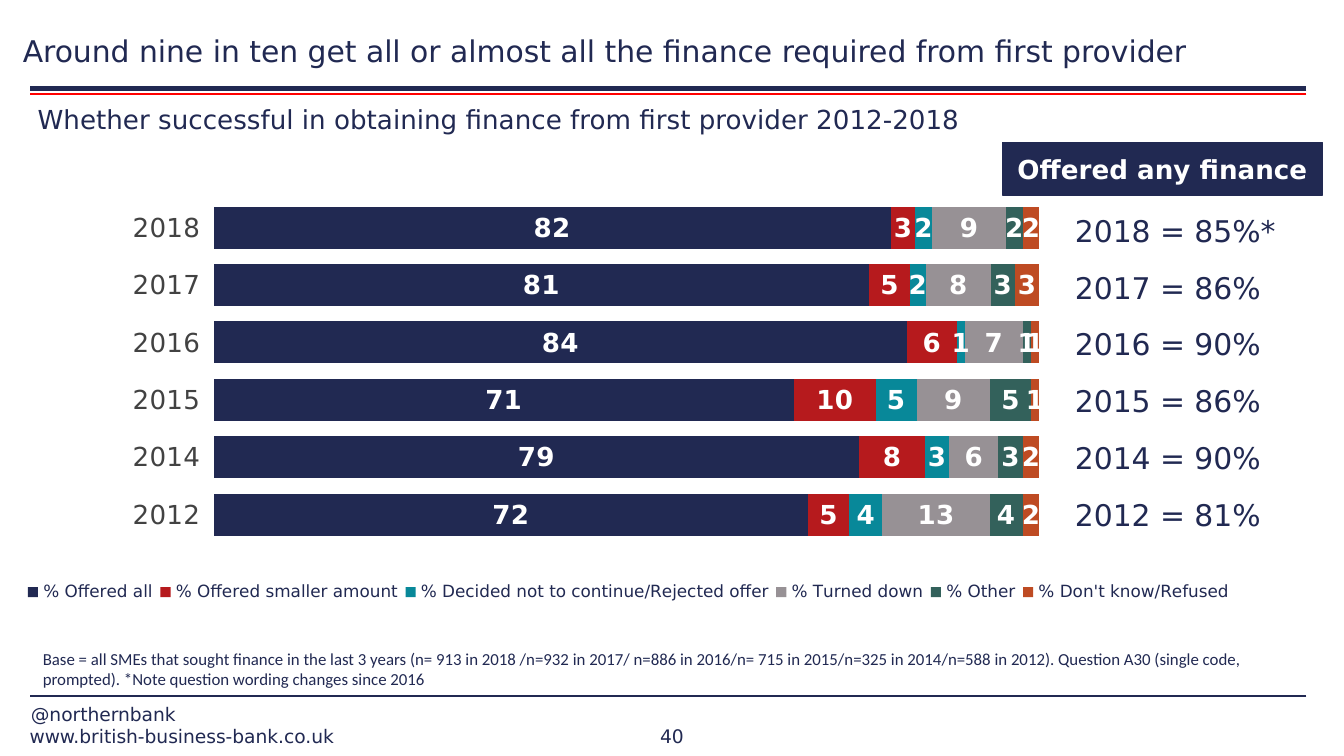
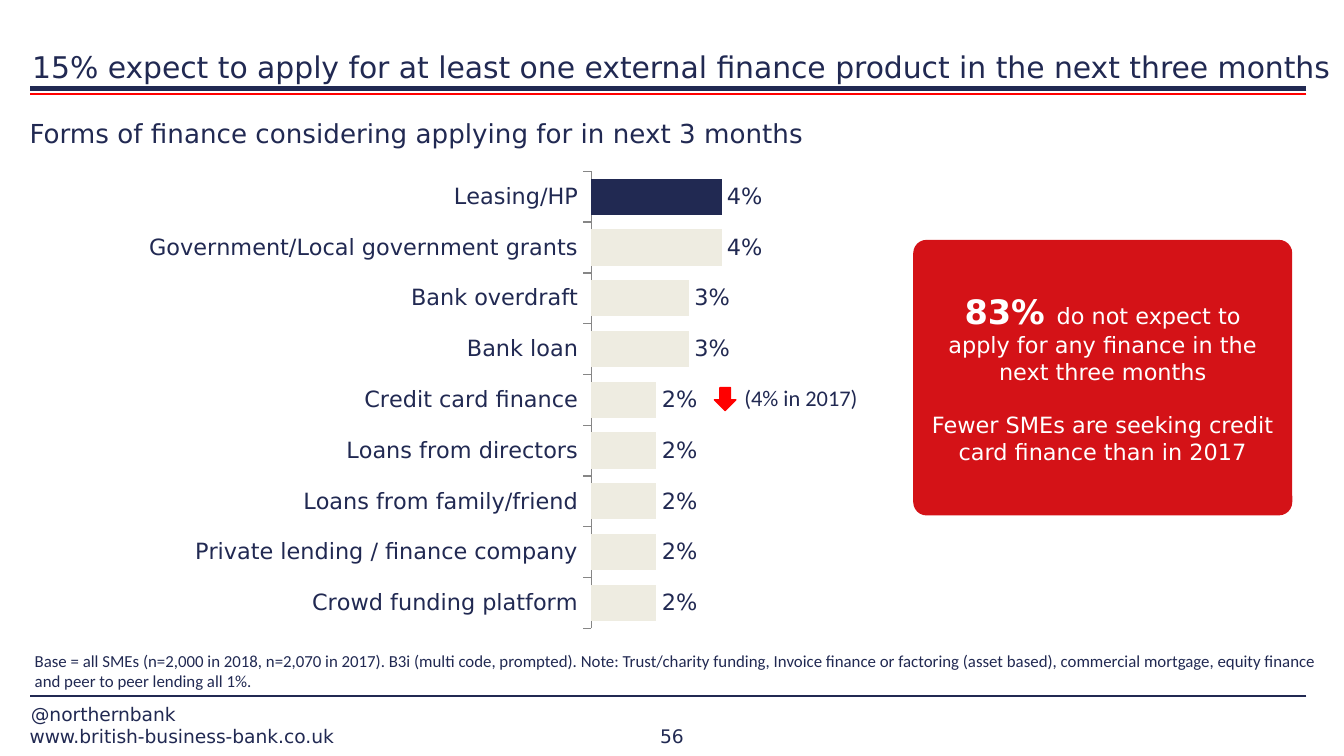
"""Build two survey slides on small business finance."""
from pptx import Presentation
from pptx.chart.data import CategoryChartData
from pptx.dml.color import RGBColor
from pptx.enum.chart import XL_CHART_TYPE, XL_LABEL_POSITION, XL_LEGEND_POSITION, XL_TICK_LABEL_POSITION, XL_TICK_MARK
from pptx.enum.shapes import MSO_CONNECTOR, MSO_SHAPE
from pptx.enum.text import MSO_ANCHOR, PP_ALIGN
from pptx.oxml import parse_xml
from pptx.oxml.ns import nsdecls
from pptx.util import Inches, Pt
from lxml.etree import SubElement

COLORS = {
    "navy": "212952", "red": "FF0000", "callout": "D41217", "white": "FFFFFF",
    "axis_text": "424242", "axis_line": "868686", "cream": "EEECE1",
    "crimson": "B61A1D", "teal": "088899", "grey": "979195",
    "green": "33615B", "rust": "BE4B23",
}
HEADING_FONT = "DejaVu Sans"
NOTE_FONT = "Calibri"
DRAWING_NS = "{http://schemas.openxmlformats.org/drawingml/2006/main}"

OFFER_YEARS = ["2018", "2017", "2016", "2015", "2014", "2012"]
OFFER_SERIES = [
    ("% Offered all", "navy", (82, 81, 84, 71, 79, 72)),
    ("% Offered smaller amount", "crimson", (3, 5, 6, 10, 8, 5)),
    ("% Decided not to continue/Rejected offer", "teal", (2, 2, 1, 5, 3, 4)),
    ("% Turned down", "grey", (9, 8, 7, 9, 6, 13)),
    ("% Other", "green", (2, 3, 1, 5, 3, 4)),
    ("% Don't know/Refused", "rust", (2, 3, 1, 1, 2, 2)),
]
ANY_FINANCE = ["85%*", "86%", "90%", "86%", "90%", "81%"]
FINANCE_FORMS = {
    "Leasing/HP": 4, "Government/Local government grants": 4,
    "Bank overdraft": 3, "Bank loan": 3, "Credit card finance": 2,
    "Loans from directors": 2, "Loans from family/friend": 2,
    "Private lending / finance company": 2, "Crowd funding platform": 2,
}


def color(name):
    """Return the named palette colour."""
    return RGBColor.from_string(COLORS[name])


def inches(box):
    """Turn a box of plain numbers into lengths."""
    return [Inches(value) for value in box]


def style_font(font, size, name=HEADING_FONT, tint="navy", bold=False):
    """Apply the typeface, size, colour and weight to a font."""
    font.name, font.size, font.bold = name, Pt(size), bold
    font.color.rgb = color(tint)


def add_text(slide, box, text, size, font=HEADING_FONT, margins=True,
             anchor=MSO_ANCHOR.TOP, align=PP_ALIGN.LEFT):
    """Add a wrapped one-paragraph text box."""
    text_frame = slide.shapes.add_textbox(*inches(box)).text_frame
    text_frame.word_wrap = True
    text_frame.vertical_anchor = anchor
    if not margins:
        clear_margins(text_frame)
    text_frame.text = text
    paragraph = text_frame.paragraphs[0]
    paragraph.alignment = align
    style_font(paragraph.runs[0].font, size, font)


def clear_margins(text_frame):
    """Remove the inner margins of a text frame."""
    text_frame.margin_left = text_frame.margin_right = 0
    text_frame.margin_top = text_frame.margin_bottom = 0


def add_block(slide, kind, box, tint):
    """Add a preset shape filled and outlined in one colour."""
    shape = slide.shapes.add_shape(kind, *inches(box))
    shape.shadow.inherit = False
    shape.fill.solid()
    shape.fill.fore_color.rgb = color(tint)
    shape.line.color.rgb = color(tint)
    shape.line.width = Pt(0.75)
    return shape


def add_rule(slide, left, right, top, tint, width):
    """Add a horizontal rule."""
    rule = slide.shapes.add_connector(
        MSO_CONNECTOR.STRAIGHT, *inches((right, top, left, top)))
    rule.line.color.rgb = color(tint)
    rule.line.width = Pt(width)
    SubElement(rule.element.spPr, DRAWING_NS + "effectLst")


def add_frame(slide, page_number):
    """Draw the title rules and the footer shared by the slides."""
    left, right = 0.22, 9.72
    for top, tint, width in ((0.66, "navy", 3), (0.7, "red", 1), (5.18, "navy", 1)):
        add_rule(slide, left, right, top, tint, width)
    footer = (
        ((left, 5.39, 3.19, 0.17), "www.british-business-bank.co.uk", PP_ALIGN.LEFT),
        ((left + 0.01, 5.23, 3.18, 0.17), "@northernbank", PP_ALIGN.LEFT),
        ((4.41, 5.39, 1.18, 0.17), str(page_number), PP_ALIGN.CENTER),
    )
    for box, text, align in footer:
        add_text(slide, box, text, 10, margins=False,
                 anchor=MSO_ANCHOR.BOTTOM, align=align)


def add_headings(slide, title_box, title, subtitle_box, subtitle):
    """Add the title above the rules and the subtitle below them."""
    add_text(slide, title_box, title, 16, margins=False, anchor=MSO_ANCHOR.BOTTOM)
    add_text(slide, subtitle_box, subtitle, 14, margins=False)


def manual_layout(left, top, width, height, inner=False):
    """Return a chart layout element given as fractions of the chart."""
    target = '<c:layoutTarget val="inner"/>' if inner else ""
    values = "".join(
        f'<c:{tag} val="{value}"/>'
        for tag, value in zip("xywh", (left, top, width, height)))
    return parse_xml(
        f'<c:layout {nsdecls("c")}><c:manualLayout>{target}'
        f'<c:xMode val="edge"/><c:yMode val="edge"/>{values}'
        "</c:manualLayout></c:layout>")


def add_bar_chart(slide, kind, box, categories, series_rows, gap, plot_layout):
    """Add a top-down bar chart with a hidden value axis."""
    chart_data = CategoryChartData()
    chart_data.categories = categories
    for name, _, values in series_rows:
        chart_data.add_series(name, values)
    chart = slide.shapes.add_chart(kind, *inches(box), chart_data).chart
    style_font(chart.font, 18, NOTE_FONT)
    chart.has_title = False
    chart.has_legend = False
    chart.value_axis.visible = False
    chart.value_axis.has_major_gridlines = False
    chart.value_axis.minimum_scale = 0
    chart.category_axis.reverse_order = True
    chart.category_axis.minor_tick_mark = XL_TICK_MARK.NONE
    chart.category_axis.tick_label_position = XL_TICK_LABEL_POSITION.LOW
    plot = chart.plots[0]
    plot.gap_width = gap
    plot.vary_by_categories = False
    for series, (_, tint, _) in zip(plot.series, series_rows):
        series.invert_if_negative = False
        series.format.fill.solid()
        series.format.fill.fore_color.rgb = color(tint)
    plot_area = chart.element.xpath("c:chart/c:plotArea")[0]
    for layout in plot_area.xpath("c:layout"):
        plot_area.remove(layout)
    plot_area.insert(0, manual_layout(*plot_layout, inner=True))
    return chart


def add_offer_chart(slide, box):
    """Add the stacked chart of offers by year, with its legend."""
    chart = add_bar_chart(slide, XL_CHART_TYPE.BAR_STACKED_100, box, OFFER_YEARS,
                          OFFER_SERIES, 37, (0.159, 0, 0.679, 0.714))
    chart.value_axis.maximum_scale = 1
    chart.value_axis.major_unit = 0.1
    axis = chart.category_axis
    axis.major_tick_mark = XL_TICK_MARK.NONE
    axis.format.line.fill.background()
    style_font(axis.tick_labels.font, 14, tint="axis_text")
    chart.plots[0].overlap = 100
    for series in chart.plots[0].series:
        labels = series.data_labels
        labels.show_value = True
        labels.position = XL_LABEL_POSITION.CENTER
        style_font(labels.font, 14, tint="white", bold=True)
    chart.has_legend = True
    legend = chart.legend
    legend.position = XL_LEGEND_POSITION.BOTTOM
    legend.include_in_layout = False
    style_font(legend.font, 9)
    for layout in legend._element.xpath("c:layout"):
        legend._element.remove(layout)
    legend._element.xpath("c:legendPos")[0].addnext(
        manual_layout(0, 0.78, 1, 0.07))


def add_any_finance(slide, box):
    """Add the header block and the yearly totals beneath it."""
    left, top, width, _ = box
    header = add_block(slide, MSO_SHAPE.RECTANGLE, (left, top, width, 0.39), "navy")
    clear_margins(header.text_frame)
    header.text_frame.text = "Offered any finance"
    header.text_frame.vertical_anchor = MSO_ANCHOR.MIDDLE
    paragraph = header.text_frame.paragraphs[0]
    paragraph.alignment = PP_ALIGN.CENTER
    style_font(paragraph.runs[0].font, 14, tint="white", bold=True)
    row_pitch = (3.65 - 1.53) / (len(OFFER_YEARS) - 1)
    for row, (year, share) in enumerate(zip(OFFER_YEARS, ANY_FINANCE)):
        row_box = (left + 0.44, top + 0.47 + row * row_pitch, 2.04, 0.37)
        add_text(slide, row_box, f"{year} = {share}", 16)


def add_forms_chart(slide, box):
    """Add the chart of finance forms, with the first bar picked out."""
    rows = [("Series 1", "cream", tuple(FINANCE_FORMS.values()))]
    chart = add_bar_chart(slide, XL_CHART_TYPE.BAR_CLUSTERED, box,
                          list(FINANCE_FORMS), rows, 40, (0.498, 0, 0.5, 1))
    chart.value_axis.maximum_scale = 20
    axis = chart.category_axis
    axis.major_tick_mark = XL_TICK_MARK.OUTSIDE
    axis.format.line.color.rgb = color("axis_line")
    style_font(axis.tick_labels.font, 12)
    series = chart.plots[0].series[0]
    leading_bar = series.points[0].format.fill
    leading_bar.solid()
    leading_bar.fore_color.rgb = color("navy")
    labels = series.data_labels
    labels.show_value = True
    labels.number_format = r"0\%"
    labels.number_format_is_linked = False
    labels.position = XL_LABEL_POSITION.OUTSIDE_END
    style_font(labels.font, 12)


def add_change_marker(slide, box):
    """Add the down arrow and the earlier share beside a bar."""
    left, top, width, height = box
    arrow = add_block(slide, MSO_SHAPE.RIGHT_ARROW,
                      (left, top + 0.08, 0.17, 0.16), "red")
    arrow.rotation = 90
    add_text(slide, (left + 0.13, top, width - 0.13, height),
             "(4% in 2017)", 12, NOTE_FONT)


def add_callout(slide, box):
    """Add the rounded box with the key finding."""
    shape = add_block(slide, MSO_SHAPE.ROUNDED_RECTANGLE, box, "callout")
    shape.adjustments[0] = 0.046
    text_frame = shape.text_frame
    text_frame.word_wrap = True
    text_frame.vertical_anchor = MSO_ANCHOR.MIDDLE
    finding = text_frame.paragraphs[0]
    trend = text_frame.add_paragraph()
    trend.space_before = Pt(14)
    runs = (
        (finding, "83% ", 18, True),
        (finding, "do not expect to apply for any finance in the next three months", 12, False),
        (trend, "Fewer SMEs are seeking credit card finance than in 2017", 12, False),
    )
    for paragraph, text, size, bold in runs:
        paragraph.alignment = PP_ALIGN.CENTER
        run = paragraph.add_run()
        run.text = text
        style_font(run.font, size, tint="white", bold=bold)


def build_offer_slide(slide):
    """Build the slide on success with the first provider."""
    add_frame(slide, 40)
    add_text(slide, (0.22, 4.78, 9.67, 0.4),
             "Base = all SMEs that sought finance in the last 3 years (n= 913 in 2018 "
             "/n=932 in 2017/ n=886 in 2016/n= 715 in 2015/n=325 in 2014/n=588 in 2012). "
             "Question A30 (single code, prompted). *Note question wording changes since 2016",
             9, NOTE_FONT)
    add_headings(
        slide, (0.17, -0.24, 9.78, 0.75),
        "Around nine in ten get all or almost all the finance required from first provider",
        (0.28, 0.77, 9.5, 3.93),
        "Whether successful in obtaining finance from first provider 2012-2018")
    add_offer_chart(slide, (0.15, 1.48, 9.05, 3.59))
    add_any_finance(slide, (7.46, 1.06, 2.38, 2.96))


def build_forms_slide(slide):
    """Build the slide on finance considered in the next three months."""
    add_frame(slide, 56)
    add_headings(
        slide, (0.24, 0.04, 9.7, 0.59),
        "15% expect to apply for at least one external finance product in the next three months",
        (0.22, 0.87, 9.5, 3.93),
        "Forms of finance considering applying for in next 3 months")
    add_text(slide, (0.16, 4.79, 9.78, 0.4),
             "Base = all SMEs (n=2,000 in 2018, n=2,070 in 2017). B3i (multi code, prompted). "
             "Note: Trust/charity funding, Invoice finance or factoring (asset based), "
             "commercial mortgage, equity finance and peer to peer lending all 1%.",
             9, NOTE_FONT)
    add_forms_chart(slide, (-0.43, 1.27, 9.7, 3.41))
    add_callout(slide, (6.8, 1.79, 2.81, 2.04))
    add_change_marker(slide, (5.31, 2.81, 1.97, 0.3))


def main():
    """Build and save the presentation."""
    presentation = Presentation()
    presentation.slide_width = Inches(10)
    presentation.slide_height = Inches(10 * 9 / 16)
    for build in (build_offer_slide, build_forms_slide):
        build(presentation.slides.add_slide(presentation.slide_layouts[6]))
    presentation.save("out.pptx")


if __name__ == "__main__":
    main()
